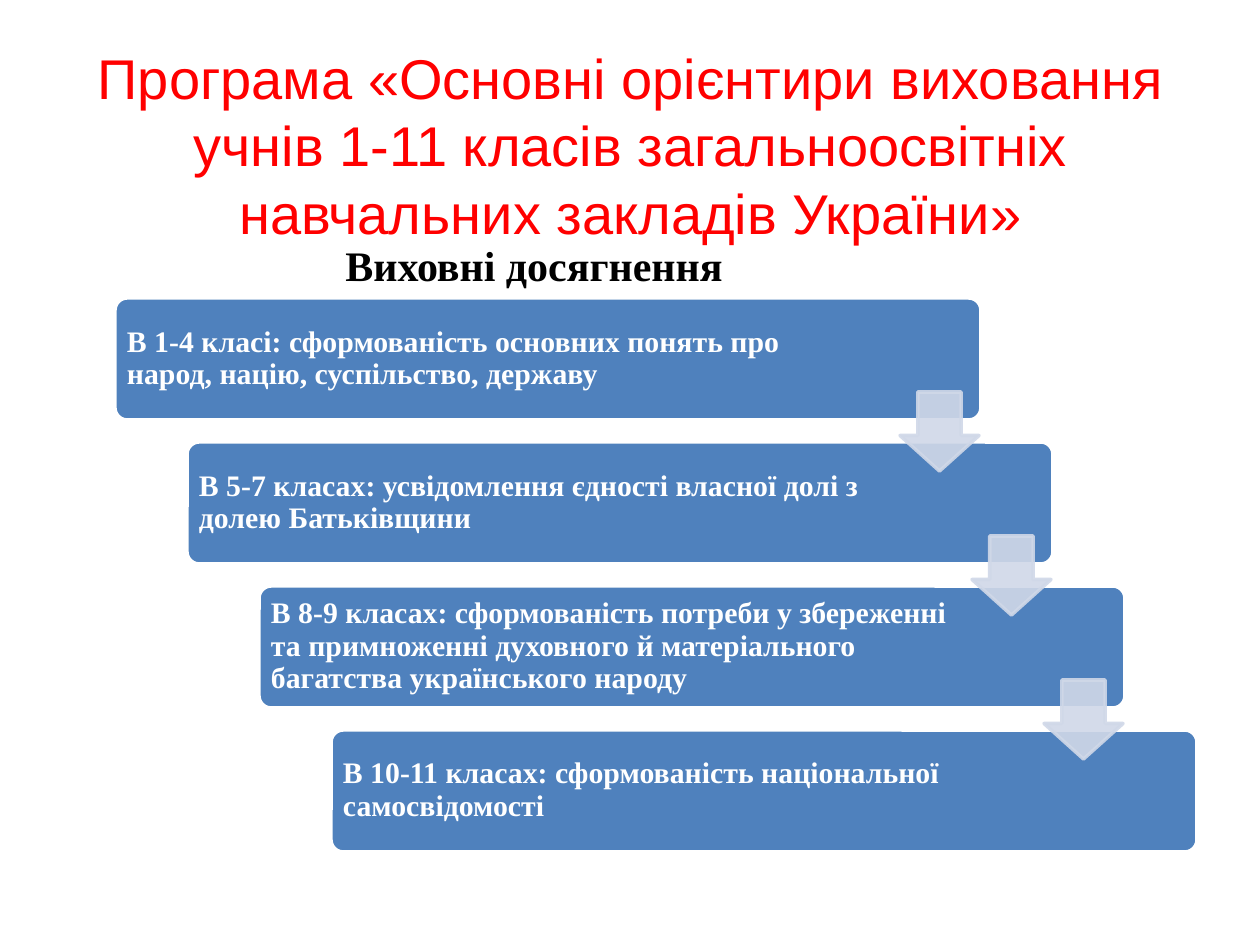
from lxml import etree
from pptx import Presentation
from pptx import util as u
from pptx.dml.color import RGBColor
from pptx.enum import shapes, text
from pptx.oxml.ns import qn

SCALE = 914400 / 126
SERIF = "Times New Roman"
STEPS = [
    "В 1-4 класі: сформованість основних понять про народ, націю, суспільство, державу",
    "В 5-7 класах: усвідомлення єдності власної долі з долею Батьківщини",
    "В 8-9 класах: сформованість потреби у збереженні та примноженні духовного "
    "й матеріального багатства українського народу",
    "В 10-11 класах: сформованість національної самосвідомості",
]


def px(n):
    return u.Emu(round(n * SCALE))


def rgb(code):
    return RGBColor.from_string(code)


class Deck:
    blue, pale, white = "4F81BD", "D0D8E8", "FFFFFF"

    def __init__(self, wide, high):
        self.prs = Presentation()
        self.prs.slide_width, self.prs.slide_height = px(wide), px(high)
        self.slide = self.prs.slides.add_slide(self.prs.slide_layouts[6])

    def shape(self, kind, box, fill, line, adjust, alpha=None):
        """Add a preset shape; alpha is the opacity in percent."""
        item = self.slide.shapes.add_shape(kind, *map(px, box))
        item.shadow.inherit = False
        for i, part in enumerate(adjust):
            item.adjustments[i] = part
        item.fill.solid()
        item.fill.fore_color.rgb = rgb(fill)
        item.line.color.rgb = rgb(line)
        item.line.width = u.Pt(2)
        if alpha:
            for tone in item._element.spPr.iter(qn("a:srgbClr")):
                etree.SubElement(tone, qn("a:alpha"), val=str(alpha * 1000))

    def card(self, box):
        self.shape(shapes.MSO_SHAPE.ROUNDED_RECTANGLE, box,
                   self.blue, self.white, [0.1])

    def arrow(self, box):
        self.shape(shapes.MSO_SHAPE.DOWN_ARROW, box,
                   self.pale, self.pale, [0.55, 0.45], alpha=90)

    def label(self, box, words, size, font, color, bold=False, align=None,
              anchor=text.MSO_ANCHOR.MIDDLE, inset=None, space=None):
        frame = self.slide.shapes.add_textbox(*map(px, box)).text_frame
        frame.word_wrap = True
        frame.vertical_anchor = anchor
        if inset is not None:
            frame.margin_left = frame.margin_right = px(inset)
            frame.margin_top = frame.margin_bottom = px(inset)
        frame.text = words
        para = frame.paragraphs[0]
        para.alignment = align
        para.line_spacing = space
        style = para.runs[0].font
        style.size, style.name, style.bold = u.Pt(size), font, bold
        style.color.rgb = rgb(color)


def main():
    deck = Deck(1260, 945)
    deck.label((64, 66, 1134, 157),
               "Програма «Основні орієнтири виховання учнів 1-11 класів "
               "загальноосвітніх навчальних закладів України»",
               32, "Arial", "FF0000", align=text.PP_ALIGN.CENTER)

    right, down = 72, 144
    for i, words in enumerate(STEPS):
        left, top = 115 + right * i, 298 + down * i
        deck.card((left, top, 866, 122))
        deck.label((left + 3, top + 3, 707, 115), words, 17, SERIF,
                   deck.white, bold=True, inset=9, space=0.9)
    for i in range(len(STEPS) - 1):
        deck.arrow((900 + right * i, 392 + down * i, 79, 79))

    deck.label((333, 233, 725, 63), "Виховні досягнення", 24, SERIF, "000000",
               bold=True, anchor=text.MSO_ANCHOR.TOP)
    deck.prs.save("out.pptx")


if __name__ == "__main__":
    main()
